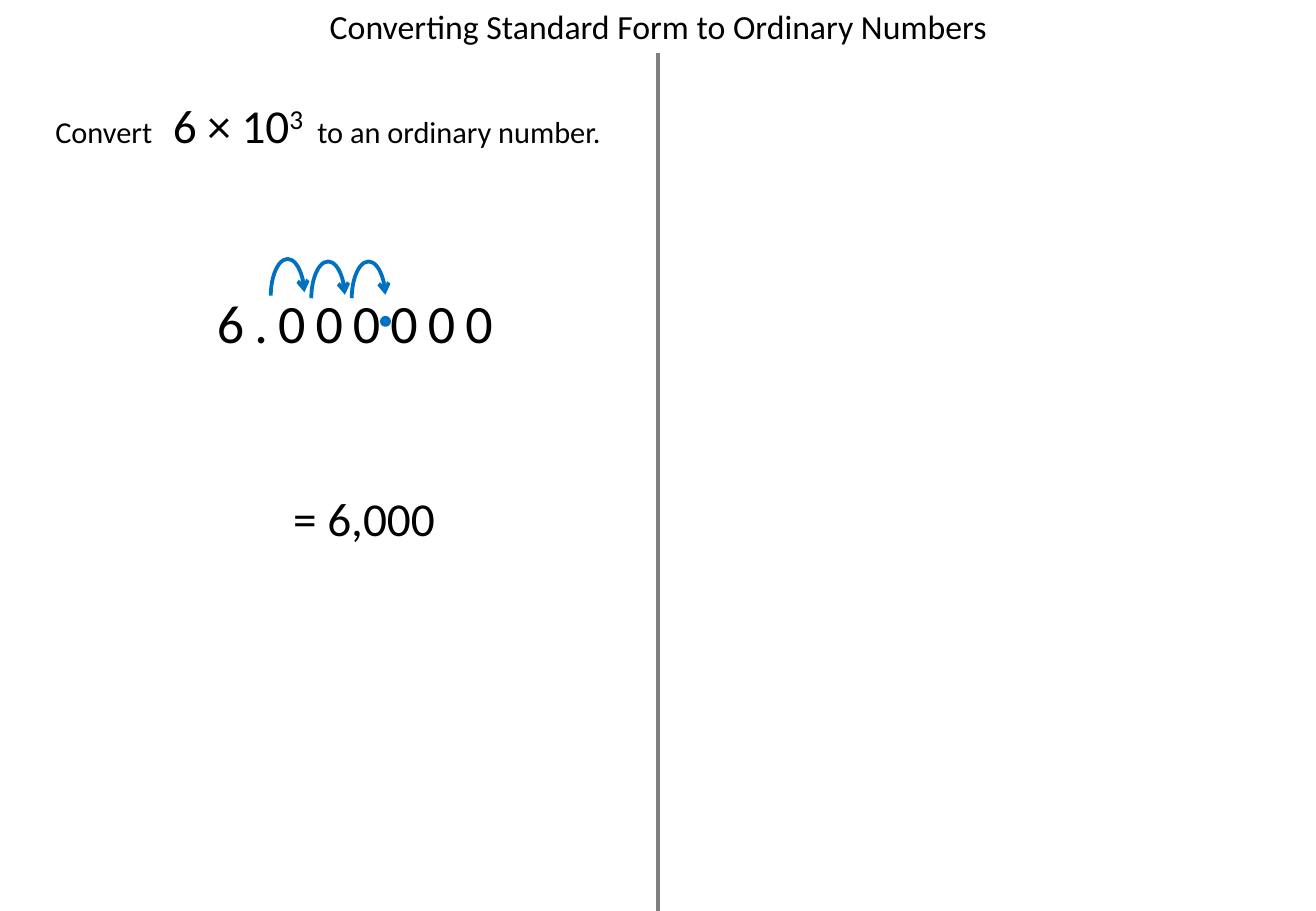
from lxml.etree import SubElement
from pptx import Presentation
from pptx.dml.color import RGBColor
from pptx.enum.shapes import MSO_CONNECTOR as CONN, MSO_SHAPE as SHAPE
from pptx.enum.text import MSO_ANCHOR as ANCHOR, MSO_AUTO_SIZE as AUTO, PP_ALIGN as ALIGN
from pptx.oxml.ns import qn
from pptx.util import Pt

BLACK = RGBColor(0x00, 0x00, 0x00)
GREY = RGBColor(0x80, 0x80, 0x80)
BLUE = RGBColor(0x00, 0x70, 0xC0)
FONT = "Calibri"
WIDTH, HEIGHT = 780, 540
HOP_STEP = 24


def place(s, left, top, width, height):
    box = {"left": left, "top": top, "width": width, "height": height}
    for name, value in box.items():
        setattr(s, name, Pt(value))


def write(s, runs, align=ALIGN.CENTER, wrap=True):
    """Fill s with runs of (text, size, raw run attributes)."""
    tf = s.text_frame
    frame_format = {
        "word_wrap": wrap, "auto_size": AUTO.SHAPE_TO_FIT_TEXT, "vertical_anchor": ANCHOR.TOP,
    }
    for name, value in frame_format.items():
        setattr(tf, name, value)
    p = tf.paragraphs[0]
    p.alignment = align
    for text, size, attributes in runs:
        r = p.add_run()
        r.text = text
        for name, value in {"name": FONT, "size": Pt(size)}.items():
            setattr(r.font, name, value)
        r.font.color.rgb = BLACK
        for name, value in attributes.items():
            r._r.get_or_add_rPr().set(name, str(value))


def add_text(slide, box, runs, **layout):
    s = slide.shapes.add_textbox(*map(Pt, box))
    write(s, runs, **layout)


def add_divider(slide, x, top, bottom):
    s = slide.shapes.add_connector(CONN.STRAIGHT, Pt(x), Pt(top), Pt(x), Pt(bottom))
    s.line.color.rgb = GREY
    s.line.width = Pt(2.25)
    SubElement(s._element.spPr, qn("a:effectLst"))


def add_blue_shape(slide, kind, box, line_width):
    s = slide.shapes.add_shape(kind, *map(Pt, box))
    s.shadow.inherit = False
    s.line.color.rgb = BLUE
    s.line.width = Pt(line_width)
    return s


def add_decimal_point(slide, box):
    s = add_blue_shape(slide, SHAPE.OVAL, box, 1.5)
    s.fill.solid()
    s.fill.fore_color.rgb = BLUE


def add_hop(slide, left, top):
    """Draw one arched arrow that carries the point past a digit."""
    s = add_blue_shape(slide, SHAPE.ARC, (left, top, 20, 44.5), 2.25)
    s.fill.background()
    s.adjustments[0], s.adjustments[1] = 109.54, 207.56
    SubElement(s.line._get_or_add_ln(), qn("a:tailEnd"), type="arrow")


def main():
    prs = Presentation()
    prs.slide_width, prs.slide_height = Pt(WIDTH), Pt(HEIGHT)
    slide = prs.slides.add_slide(prs.slide_layouts[5])

    title = slide.shapes.title
    place(title, 186.5, 0, 407.5, 31.5)
    write(title, [("Converting Standard Form to Ordinary Numbers", 20, {})], wrap=False)
    add_divider(slide, WIDTH / 2, 31.5, HEIGHT)

    add_text(slide, (121.5, 168, 186, 46), [("6.000000", 32, {"spc": 600})],
             align=ALIGN.LEFT, wrap=False)
    add_decimal_point(slide, (226, 188, 5, 5))
    for i, top in enumerate((153.5, 155, 155)):
        add_hop(slide, 160.5 + i * HOP_STEP, top)

    add_text(slide, (152, 286.5, 127.5, 41), [("= 6,000", 28, {})])
    add_text(slide, (-13, 53.5, 415, 41), [
        ("Convert", 18, {}),
        (" ", 18, {"spc": 810}),
        ("6 × 10", 28, {}),
        ("3", 28, {"baseline": 30000}),
        (" ", 18, {"spc": 430}),
        ("to an ordinary number.", 18, {}),
    ])
    prs.save("out.pptx")


if __name__ == "__main__":
    main()
